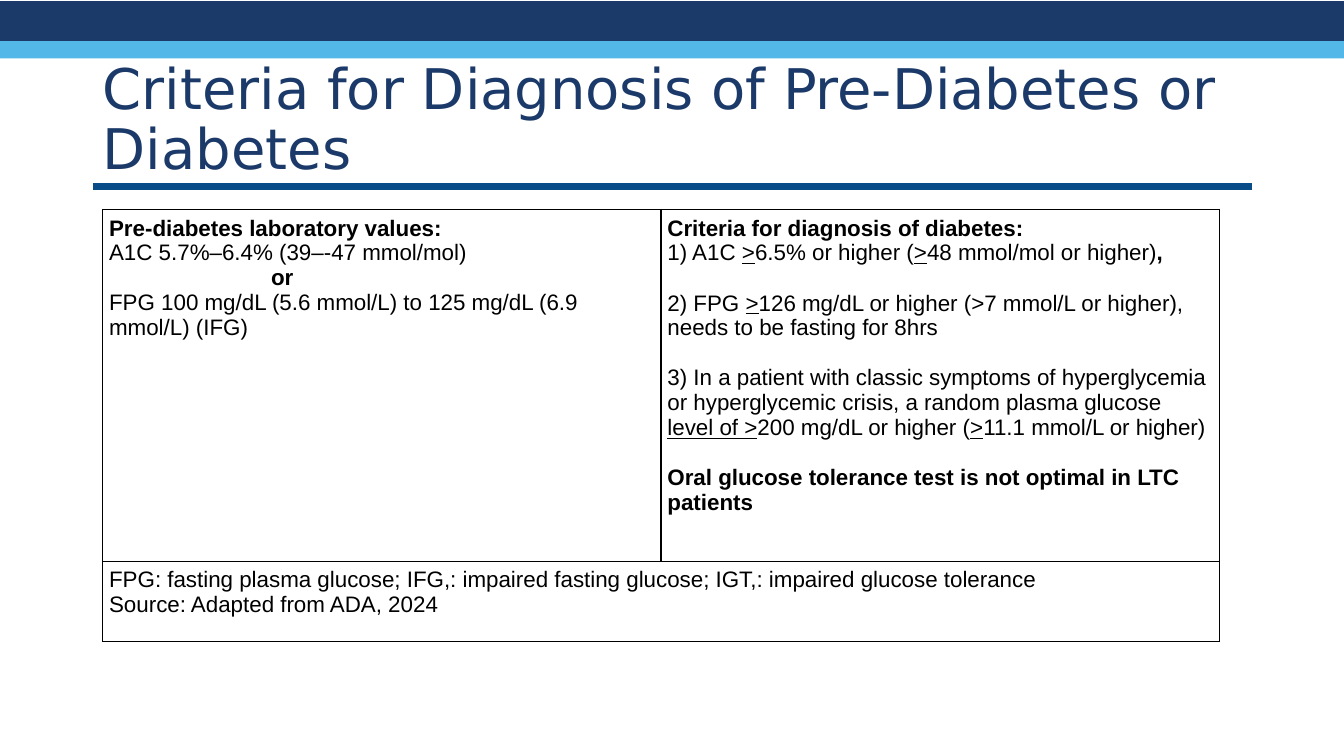
"""Builds a slide on the diagnostic criteria for pre-diabetes and diabetes."""
from lxml.etree import SubElement
from pptx import Presentation
from pptx.dml.color import RGBColor
from pptx.enum.shapes import MSO_CONNECTOR as Connector, MSO_SHAPE as Shape
from pptx.enum.text import MSO_ANCHOR as Anchor, MSO_AUTO_SIZE as AutoSize, PP_ALIGN as Align
from pptx.oxml.ns import qn
from pptx.util import Cm, Pt

NAVY, SKY, BLUE, BLACK = "1B3A69", "53B7E8", "094D88", "000000"
BLANK_LINE = 18
OR_INDENT = 4.08

PRE_DIABETES = [
    {"runs": [("Pre-diabetes laboratory values:", "b")]},
    {"runs": [("A1C 5.7%–6.4% (39–-47 mmol/mol)", "")]},
    {"runs": [("or", "b")], "indent": OR_INDENT},
    {"runs": [("FPG 100 mg/dL (5.6 mmol/L) to 125 mg/dL (6.9 mmol/L) (IFG)", "")]},
]
DIABETES = [
    {"runs": [("Criteria for diagnosis of diabetes:", "b")]},
    {"runs": [("1) A1C ", ""), (">", "u"), ("6.5% or higher (", ""), (">", "u"),
              ("48 mmol/mol or higher)", ""), (",", "b")]},
    {"runs": [("2) FPG ", ""), (">", "u"),
              ("126 mg/dL or higher (>7 mmol/L or higher), needs to be fasting for 8hrs", "")],
     "before": BLANK_LINE},
    {"runs": [("3) In a patient with classic symptoms of hyperglycemia or hyperglycemic crisis, "
               "a random plasma glucose ", ""), ("level of >", "u"),
              ("200 mg/dL or higher (", ""), (">", "u"), ("11.1 mmol/L or higher)", "")],
     "before": BLANK_LINE},
    {"runs": [("Oral glucose tolerance test is not optimal in LTC patients", "b")],
     "before": BLANK_LINE},
]
FOOTNOTE = [
    {"runs": [("FPG: fasting plasma glucose; IFG,: impaired fasting glucose; "
               "IGT,: impaired glucose tolerance", "")]},
    {"runs": [("Source: Adapted from ADA, 2024", "")]},
]


def color(value):
    """Return the colour for a hex string."""
    return RGBColor.from_string(value)


def format_font(font, size, name, fill, bold=False, underline=False):
    """Set size, typeface, colour and emphasis of a font."""
    font.size, font.name = Pt(size), name
    font.bold, font.underline = bold, underline
    font.color.rgb = color(fill)


def add_band(slide, top, height, fill):
    """Add a full-width band without outline."""
    shape = slide.shapes.add_shape(Shape.RECTANGLE, Cm(0), Cm(top), Cm(33.87), Cm(height))
    shape.shadow.inherit = False
    shape.fill.solid()
    shape.fill.fore_color.rgb = color(fill)
    shape.line.fill.background()


def add_rule(slide, left, right, top, fill, width):
    """Add a horizontal line."""
    line = slide.shapes.add_connector(Connector.STRAIGHT, Cm(left), Cm(top), Cm(right), Cm(top))
    line.line.color.rgb = color(fill)
    line.line.width = Pt(width)
    SubElement(line._element.spPr, qn("a:effectLst"))


def set_title(slide, text):
    """Place and format the title placeholder."""
    title = slide.shapes.title
    title.left, title.top, title.width, title.height = Cm(2.34), Cm(1.22), Cm(29.21), Cm(3.68)
    frame = title.text_frame
    frame.text = text
    frame.word_wrap = True
    frame.auto_size = AutoSize.NONE
    frame.vertical_anchor = Anchor.MIDDLE
    paragraph = frame.paragraphs[0]
    paragraph.alignment = Align.LEFT
    paragraph.line_spacing = 0.9
    format_font(paragraph.runs[0].font, 40, "DejaVu Sans", NAVY)


def add_paragraph(paragraph, runs, before=0, indent=0):
    """Fill a paragraph with runs marked b for bold or u for underlined."""
    paragraph.alignment = Align.LEFT
    if before:
        paragraph.space_before = Pt(before)
    if indent:
        paragraph._p.get_or_add_pPr().set("marL", str(Cm(indent)))
    for text, style in runs:
        run = paragraph.add_run()
        run.text = text
        format_font(run.font, 16, "Arial", BLACK, bold=style == "b", underline=style == "u")


def format_cell(cell):
    """Give a cell thin black borders, small margins and no fill."""
    cell.margin_left = cell.margin_right = cell.margin_top = cell.margin_bottom = Cm(0.16)
    properties = cell._tc.get_or_add_tcPr()
    for side in ("lnL", "lnR", "lnT", "lnB"):
        border = SubElement(properties, qn(f"a:{side}"), w=str(Pt(1)))
        fill = SubElement(border, qn("a:solidFill"))
        SubElement(fill, qn("a:srgbClr"), val=BLACK)
    cell.fill.background()


def fill_cell(cell, paragraphs):
    """Write the paragraphs into a cell."""
    frame = cell.text_frame
    for index, content in enumerate(paragraphs):
        paragraph = frame.add_paragraph() if index else frame.paragraphs[0]
        add_paragraph(paragraph, **content)


def add_criteria_table(slide):
    """Add the two criteria columns above a merged footnote row."""
    frame = slide.shapes.add_table(2, 2, Cm(2.59), Cm(5.28), Cm(28.14), Cm(10.89))
    table = frame.table
    table.first_row = table.horz_banding = False
    for row, height in zip(table.rows, (8.86, 2.03)):
        row.height = Cm(height)
    for cell in table.iter_cells():
        format_cell(cell)
    table.cell(1, 0).merge(table.cell(1, 1))
    fill_cell(table.cell(0, 0), PRE_DIABETES)
    fill_cell(table.cell(0, 1), DIABETES)
    fill_cell(table.cell(1, 0), FOOTNOTE)


def main():
    """Build and save the presentation."""
    presentation = Presentation()
    presentation.slide_width, presentation.slide_height = Cm(33.87), Cm(19.05)
    slide = presentation.slides.add_slide(presentation.slide_layouts[5])
    add_band(slide, 0.03, 1.07, NAVY)
    add_band(slide, 1.04, 0.43, SKY)
    add_rule(slide, 2.34, 31.55, 4.7, BLUE, 4.5)
    set_title(slide, "Criteria for Diagnosis of Pre-Diabetes or Diabetes")
    add_criteria_table(slide)
    presentation.save("out.pptx")


if __name__ == "__main__":
    main()
